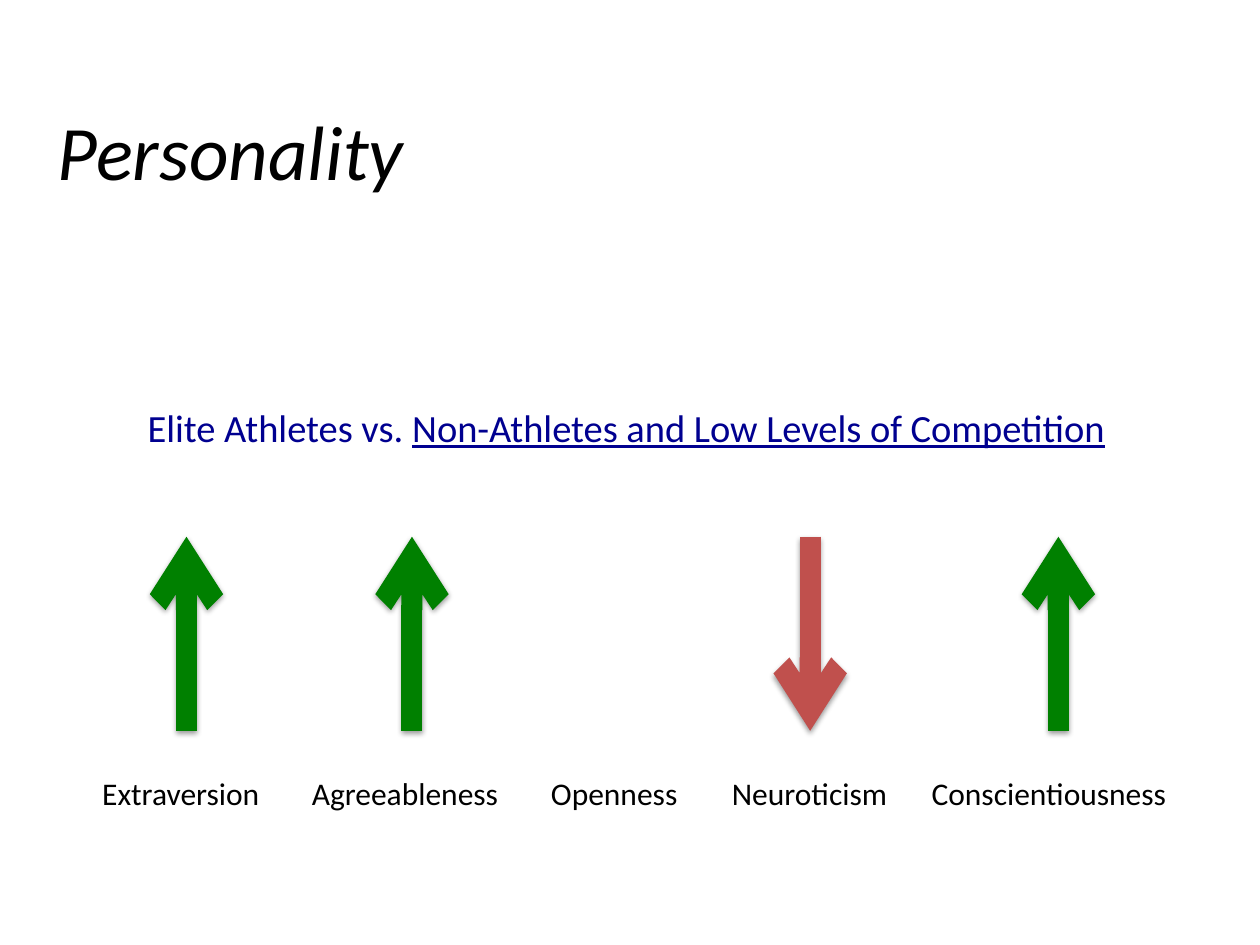
from dataclasses import dataclass

from lxml import etree
from pptx import Presentation
from pptx.dml.color import RGBColor
from pptx.enum.shapes import MSO_CONNECTOR
from pptx.enum.text import MSO_ANCHOR, PP_ALIGN
from pptx.oxml import parse_xml
from pptx.oxml.ns import qn
from pptx.util import Inches, Pt

STRAIGHT = MSO_CONNECTOR.STRAIGHT
MIDDLE = MSO_ANCHOR.MIDDLE
LEFT, CENTER = PP_ALIGN.LEFT, PP_ALIGN.CENTER
TITLE_ONLY = 5

SHADOW = """
<a:effectLst xmlns:a="http://schemas.openxmlformats.org/drawingml/2006/main">
  <a:outerShdw blurRad="40000" dist="20000" dir="5400000" rotWithShape="0">
    <a:srgbClr val="000000"><a:alpha val="38000"/></a:srgbClr>
  </a:outerShdw>
</a:effectLst>"""


@dataclass(frozen=True)
class Theme:
    font: str = "Calibri"
    text: RGBColor = RGBColor(0x00, 0x00, 0x00)
    heading: RGBColor = RGBColor(0x00, 0x00, 0x90)
    higher: RGBColor = RGBColor(0x00, 0x80, 0x00)
    lower: RGBColor = RGBColor(0xC0, 0x50, 0x4D)
    title_size: int = 44
    heading_size: int = 22
    label_size: int = 18
    arrow_width: int = 12


THEME = Theme()

# Trait, label left, label width, arrow centre, arrow colour (None: no difference)
TRAITS = [
    ("Extraversion", 0.5, 1.87, 1.48, THEME.higher),
    ("Agreeableness", 2.28, 1.87, 3.27, THEME.higher),
    ("Openness", 3.94, 1.87, None, None),
    ("Neuroticism", 5.49, 1.87, 6.43, THEME.lower),
    ("Conscientiousness", 7.26, 2.13, 8.4, THEME.higher),
]


def style_paragraph(para, size, color, align):
    para.alignment = align
    para.font.name = THEME.font
    para.font.size = Pt(size)
    para.font.color.rgb = color


def add_title(page, text, left, top, width, height):
    title = page.shapes.title
    title.left, title.top = Inches(left), Inches(top)
    title.width, title.height = Inches(width), Inches(height)
    title.text_frame.text = text
    title.text_frame.vertical_anchor = MIDDLE
    para = title.text_frame.paragraphs[0]
    style_paragraph(para, THEME.title_size, THEME.text, LEFT)
    para.font.italic = True


def add_centered_text(shapes, text, left, top, width, height, size, color):
    box = shapes.add_textbox(Inches(left), Inches(top), Inches(width), Inches(height))
    box.text_frame.word_wrap = True
    para = box.text_frame.paragraphs[0]
    para.add_run().text = text
    style_paragraph(para, size, color, CENTER)
    return para


def add_heading(page, left, top, width, height):
    para = add_centered_text(page.shapes, "Elite Athletes vs. ", left, top, width,
                             height, THEME.heading_size, THEME.heading)
    span = para.add_run()
    span.text = "Non-Athletes and Low Levels of Competition"
    span.font.underline = True


def add_arrow(shapes, center, start, end, color):
    arrow = shapes.add_connector(STRAIGHT, Inches(center), Inches(start),
                                 Inches(center), Inches(end))
    arrow.line.color.rgb = color
    arrow.line.width = Pt(THEME.arrow_width)
    properties = arrow.element.spPr
    etree.SubElement(properties.find(qn("a:ln")), qn("a:tailEnd"), type="arrow")
    properties.append(parse_xml(SHADOW))


def add_traits(page, top, height, arrow_height=1.54, label_height=0.4):
    """Place arrows along the top and trait names along the bottom of the band."""
    group = page.shapes.add_group_shape()
    arrow_bottom = top + arrow_height
    label_top = top + height - label_height
    for name, left, width, center, color in TRAITS:
        add_centered_text(group.shapes, name, left, label_top, width, label_height,
                          THEME.label_size, THEME.text)
        if color == THEME.higher:
            add_arrow(group.shapes, center, arrow_bottom, top, color)
        elif color == THEME.lower:
            add_arrow(group.shapes, center, top, arrow_bottom, color)


def main():
    deck = Presentation()
    deck.slide_width, deck.slide_height = Inches(10), Inches(7.5)
    page = deck.slides.add_slide(deck.slide_layouts[TITLE_ONLY])
    add_traits(page, top=4.26, height=2.23)
    add_heading(page, 0.24, 3.16, 9.46, 0.47)
    add_title(page, "Personality", 0.36, 0.56, 9, 1.25)
    deck.save("out.pptx")


if __name__ == "__main__":
    main()
